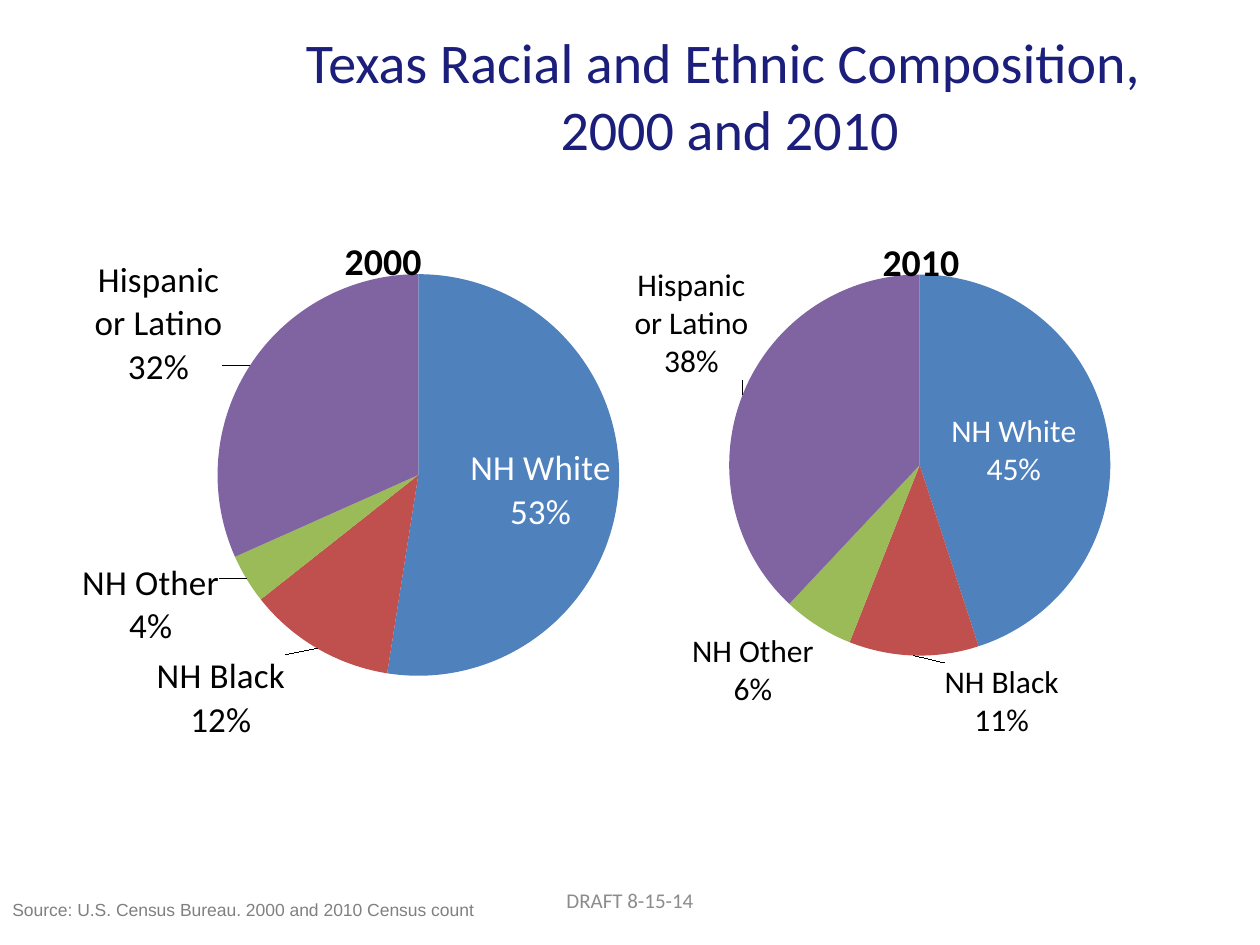
"""Build the slide comparing the Texas racial and ethnic composition in 2000 and 2010."""
from pptx import Presentation
from pptx.chart.data import CategoryChartData
from pptx.dml.color import RGBColor
from pptx.enum.chart import XL_CHART_TYPE, XL_LABEL_POSITION
from pptx.enum.text import MSO_ANCHOR, PP_ALIGN
from pptx.oxml import parse_xml
from pptx.oxml.ns import nsdecls, qn
from pptx.util import Pt

NAVY = RGBColor(0x1B, 0x1E, 0x7A)
BLACK = RGBColor(0, 0, 0)
WHITE = RGBColor(0xFF, 0xFF, 0xFF)
SOURCE_GRAY = RGBColor(0x80, 0x80, 0x80)
DRAFT_GRAY = RGBColor(0x8C, 0x8C, 0x8C)
SLICE_COLORS = [
    RGBColor(0x4F, 0x81, 0xBD),
    RGBColor(0xC0, 0x50, 0x4D),
    RGBColor(0x9B, 0xBB, 0x59),
    RGBColor(0x80, 0x64, 0xA2),
]
GROUPS = ["NH White", "NH Black", "NH Other", "Hispanic or Latino"]
PERCENT_FORMAT = '0"%"'


def add_text(text, left, top, width, height, size, color, font="Calibri",
             align=PP_ALIGN.CENTER, anchor=MSO_ANCHOR.TOP):
    frame = slide.shapes.add_textbox(Pt(left), Pt(top), Pt(width), Pt(height)).text_frame
    frame.word_wrap = True
    frame.vertical_anchor = anchor
    frame.text = text
    for paragraph in frame.paragraphs:
        paragraph.alignment = align
        paragraph.font.size = Pt(size)
        paragraph.font.name = font
        paragraph.font.color.rgb = color


def place(parent, index, mode="", **position):
    for layout in parent.findall(qn("c:layout")):
        parent.remove(layout)
    values = "".join(f'<c:{name} val="{value}"/>' for name, value in position.items())
    parent.insert(index, parse_xml(
        f'<c:layout {nsdecls("c")}><c:manualLayout>{mode}{values}</c:manualLayout></c:layout>'))


presentation = Presentation()
presentation.slide_width = Pt(720)
presentation.slide_height = Pt(540)
slide = presentation.slides.add_slide(presentation.slide_layouts[6])

add_text("Texas Racial and Ethnic Composition, \n2000 and 2010", 126, 12, 582, 78, 32, NAVY)

EDGES = '<c:xMode val="edge"/><c:yMode val="edge"/>'
INNER = f'<c:layoutTarget val="inner"/>{EDGES}'
OUTSIDE = XL_LABEL_POSITION.OUTSIDE_END
pies = [
    dict(year="2000", shares=[53, 12, 4, 32], frame=(18, 120, 402, 306), label_size=20,
         plot=dict(x=0.24, y=0.12, w=0.62, h=0.75), title=None,
         first_position=XL_LABEL_POSITION.INSIDE_END,
         offsets=[None, (-0.04, 0), (-0.03, -0.04), (-0.03, 0.05)]),
    dict(year="2010", shares=[45, 11, 6, 38], frame=(342, 114, 360, 330), label_size=18,
         plot=dict(x=0.14, y=0.13, w=0.74, h=0.66), title=dict(x=0.44, y=0.05),
         first_position=XL_LABEL_POSITION.CENTER,
         offsets=[None, (0.14, 0), None, (0.02, -0.02)]),
]

for pie in pies:
    data = CategoryChartData(number_format=PERCENT_FORMAT)
    data.categories = GROUPS
    data.add_series(pie["year"], pie["shares"])
    frame = [Pt(length) for length in pie["frame"]]
    chart = slide.shapes.add_chart(XL_CHART_TYPE.PIE, *frame, data).chart
    chart.has_legend = False
    chart.font.name = "Calibri"
    chart.font.size = Pt(18)
    chart.font.color.rgb = BLACK

    chart.has_title = True
    chart.chart_title.text_frame.text = pie["year"]
    title_font = chart.chart_title.text_frame.paragraphs[0].runs[0].font
    title_font.size = Pt(21.6)
    title_font.bold = True
    title_font.name = "Calibri"
    title_font.color.rgb = BLACK
    chart_element = chart.element.find(qn("c:chart"))
    place(chart_element.find(qn("c:plotArea")), 0, INNER, **pie["plot"])
    if pie["title"]:
        place(chart_element.find(qn("c:title")), 1, EDGES, **pie["title"])

    plot = chart.plots[0]
    plot.vary_by_categories = True
    series = plot.series[0]
    for index, color in enumerate(SLICE_COLORS):
        point = series.points[index]
        point.format.fill.solid()
        point.format.fill.fore_color.rgb = color
        label = point.data_label
        label.font.size = Pt(pie["label_size"])
        label.font.name = "Calibri"
        label.font.color.rgb = BLACK if index else WHITE
        label.position = OUTSIDE if index else pie["first_position"]

    for element, offset in zip(chart_element.iter(qn("c:dLbl")), pie["offsets"]):
        element.find(qn("c:showCatName")).set("val", "1")
        element.insert(1, parse_xml(
            f"<c:numFmt {nsdecls('c')} formatCode='{PERCENT_FORMAT}' sourceLinked='0'/>"))
        element.append(parse_xml(f'<c:separator {nsdecls("c")}>\n</c:separator>'))
        if offset:
            place(element, 1, x=offset[0], y=offset[1])

add_text("Source: U.S. Census Bureau. 2000 and 2010 Census count", 0, 510, 282, 44, 10,
         SOURCE_GRAY, font="Arial", align=PP_ALIGN.LEFT)
add_text("DRAFT 8-15-14", 246, 500, 228, 29, 12, DRAFT_GRAY, anchor=MSO_ANCHOR.MIDDLE)

presentation.save("out.pptx")
